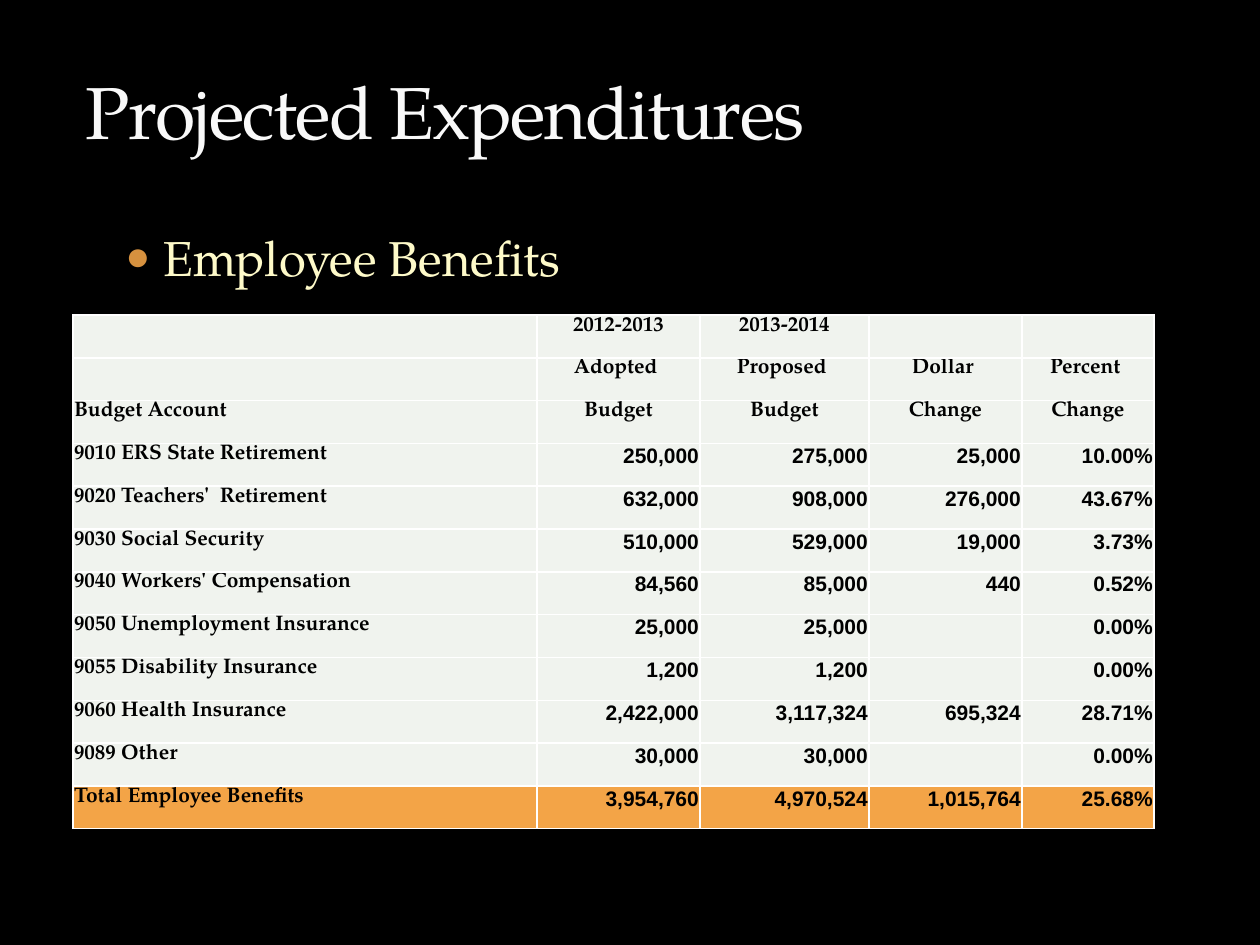
import pptx
import pptx.dml.color
import pptx.enum.text
import pptx.oxml
import pptx.oxml.ns
import pptx.util

EMU_PER_PX = 914400 / 126
SERIF, SANS = "TeX Gyre Pagella", "Arial"
COLORS = {
    "background": "000000",
    "title": "F9F9F9",
    "body": "FEFAC9",
    "bullet": "D6913F",
    "cell": "F0F3EE",
    "total": "F3A447",
    "cell_text": "000000",
    "border": "FFFFFF",
}
LEFT, CENTER, RIGHT = (
    pptx.enum.text.PP_ALIGN.LEFT,
    pptx.enum.text.PP_ALIGN.CENTER,
    pptx.enum.text.PP_ALIGN.RIGHT,
)
HEADER_ROWS = 3
COLUMN_WIDTHS = [464, 163, 169, 153, 132]
TABLE_HEIGHT = 514
ROWS = [
    ["", "2012-2013", "2013-2014", "", ""],
    ["", "Adopted ", "Proposed ", "Dollar ", "Percent "],
    ["Budget Account", "Budget", "Budget", "Change", "Change"],
    ["9010 ERS State Retirement", "250,000", "275,000", "25,000", "10.00%"],
    ["9020 Teachers'  Retirement", "632,000", "908,000", "276,000", "43.67%"],
    ["9030 Social Security", "510,000", "529,000", "19,000", "3.73%"],
    ["9040 Workers' Compensation", "84,560", "85,000", "440", "0.52%"],
    ["9050 Unemployment Insurance", "25,000", "25,000", "", "0.00%"],
    ["9055 Disability Insurance", "1,200", "1,200", "", "0.00%"],
    ["9060 Health Insurance", "2,422,000", "3,117,324", "695,324", "28.71%"],
    ["9089 Other", "30,000", "30,000", "", "0.00%"],
    ["Total Employee Benefits", "3,954,760", "4,970,524", "1,015,764", "25.68%"],
]


def px(n):
    return pptx.util.Emu(round(n * EMU_PER_PX))


def rgb(name):
    return pptx.dml.color.RGBColor.from_string(COLORS[name])


def xml(markup):
    return pptx.oxml.parse_xml(markup.replace(">", f" {pptx.oxml.ns.nsdecls('a')}>", 1))


def write(tf, text, *, size, color, font=SERIF, bold=False, align=LEFT, spacing=None):
    """Put one formatted run in the first paragraph and return the paragraph."""
    p = tf.paragraphs[0]
    p.alignment = align
    r = p.add_run()
    r.text = text
    r.font.size = pptx.util.Pt(size)
    r.font.name = font
    r.font.bold = bold
    r.font.color.rgb = rgb(color)
    if spacing is not None:
        r.font._element.set("spc", str(spacing))
    return p


def add_text(s, left, top, width, height, text, *, anchor, **fmt):
    tf = s.shapes.add_textbox(px(left), px(top), px(width), px(height)).text_frame
    tf.word_wrap = True
    tf.vertical_anchor = anchor
    return write(tf, text, **fmt)


def add_bullet(p, indent, hanging):
    pPr = p._p.get_or_add_pPr()
    pPr.set("marL", str(px(indent)))
    pPr.set("indent", str(-px(hanging)))
    for markup in (
        f'<a:buClr><a:srgbClr val="{COLORS["bullet"]}"/></a:buClr>',
        '<a:buSzPct val="85000"></a:buSzPct>',
        f'<a:buFont typeface="{SANS}"></a:buFont>',
        '<a:buChar char="●"></a:buChar>',
    ):
        pPr.append(xml(markup))


def add_borders(cell):
    tcPr = cell._tc.get_or_add_tcPr()
    for i, side in enumerate(("lnL", "lnR", "lnT", "lnB")):
        tcPr.insert(i, xml(
            f'<a:{side} w="12700"><a:solidFill><a:srgbClr val="{COLORS["border"]}"/>'
            f'</a:solidFill></a:{side}>'))


def fill_cell(cell, text, row, col):
    cell.margin_left = cell.margin_right = cell.margin_top = px(1)
    cell.margin_bottom = 0
    cell.fill.solid()
    cell.fill.fore_color.rgb = rgb("total" if row == len(ROWS) - 1 else "cell")
    add_borders(cell)
    header = row < HEADER_ROWS
    align = LEFT if col == 0 else CENTER if header else RIGHT
    font = SERIF if header or col == 0 else SANS
    write(cell.text_frame, text, size=12, color="cell_text", font=font,
          bold=True, align=align)


def add_budget_table(s, left, top):
    table = s.shapes.add_table(len(ROWS), len(COLUMN_WIDTHS), px(left), px(top),
                               px(sum(COLUMN_WIDTHS)), px(TABLE_HEIGHT)).table
    for column, width in zip(table.columns, COLUMN_WIDTHS):
        column.width = px(width)
    for i, values in enumerate(ROWS):
        table.rows[i].height = px(TABLE_HEIGHT / len(ROWS))
        for j, text in enumerate(values):
            fill_cell(table.cell(i, j), text, i, j)


def main():
    prs = pptx.Presentation()
    prs.slide_width, prs.slide_height = px(1260), px(945)
    s = prs.slides.add_slide(prs.slide_layouts[6])
    s.background.fill.solid()
    s.background.fill.fore_color.rgb = rgb("background")

    # Heading and bullet
    p = add_text(s, 63, 221, 1134, 703, "Employee Benefits", size=28, color="body",
                 anchor=pptx.enum.text.MSO_ANCHOR.TOP)
    p.space_before = pptx.util.Pt(3)
    add_bullet(p, indent=88, hanging=38)
    add_text(s, 73, 53, 1134, 107, "Projected Expenditures", size=42, color="title",
             spacing=-100, anchor=pptx.enum.text.MSO_ANCHOR.BOTTOM)

    # Budget table
    add_budget_table(s, 73, 315)

    prs.save("out.pptx")


if __name__ == "__main__":
    main()
